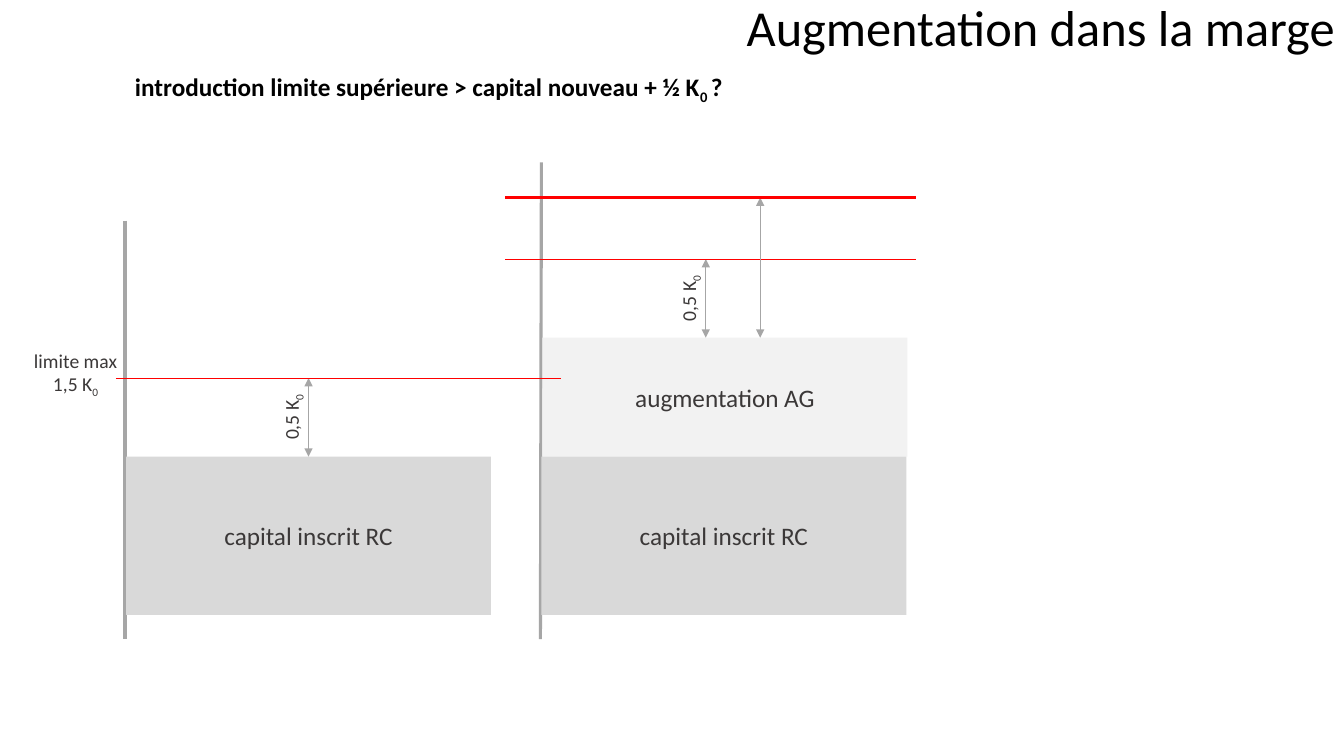
"""Build the slide on raising capital within the authorised margin."""
from typing import NamedTuple

from lxml import etree
from pptx import Presentation
from pptx.dml.color import RGBColor
from pptx.enum.shapes import MSO_CONNECTOR, MSO_SHAPE
from pptx.enum.text import MSO_ANCHOR, MSO_AUTO_SIZE, PP_ALIGN
from pptx.oxml.ns import qn
from pptx.util import Inches, Pt

STRAIGHT = MSO_CONNECTOR.STRAIGHT
RECTANGLE = MSO_SHAPE.RECTANGLE
TOP, MIDDLE = MSO_ANCHOR.TOP, MSO_ANCHOR.MIDDLE
LEFT, CENTER, RIGHT = PP_ALIGN.LEFT, PP_ALIGN.CENTER, PP_ALIGN.RIGHT
NO_FIT, GROW = MSO_AUTO_SIZE.NONE, MSO_AUTO_SIZE.SHAPE_TO_FIT_TEXT

COLORS = {
    "axis": "A6A6A6",
    "limit": "FF0000",
    "registered": "D9D9D9",
    "increase": "F2F2F2",
    "label": "3B3838",
    "heading": "000000",
}
FONT = "Calibri"
BLOCK_WIDTH = 3.62
BASE_TOP, BASE_HEIGHT = 4.53, 1.57
INCREASE_HEIGHT = 1.18
INCREASE_TOP = BASE_TOP - INCREASE_HEIGHT
OLD_LIMIT, NEW_LIMIT, RAISED_LIMIT = 3.75, 2.57, 1.96


class Piece(NamedTuple):
    text: str
    subscript: bool = False


class Block(NamedTuple):
    text: str
    left: float
    top: float
    height: float
    color: str


class Rule(NamedTuple):
    x1: float
    y1: float
    x2: float
    y2: float
    color: str
    weight: float
    arrows: bool = False


class Label(NamedTuple):
    left: float
    top: float
    width: float
    height: float
    lines: list
    size: int = 14
    color: str = "label"
    bold: bool = False
    align: PP_ALIGN = CENTER
    rotation: int = 0


ZERO = Piece("0", True)
HALF_CAPITAL = [[Piece("0,5 K"), ZERO]]

AXES = [
    Rule(1.24, 2.19, 1.24, 6.34, "axis", 2.25),
    Rule(5.37, 1.61, 5.36, 6.34, "axis", 2.25),
]
CURRENT_CAPITAL = Block("capital inscrit RC", 1.25, BASE_TOP, BASE_HEIGHT, "registered")
FUTURE_BLOCKS = [
    Block("augmentation AG", 5.38, INCREASE_TOP, INCREASE_HEIGHT, "increase"),
    Block("capital inscrit RC", 5.37, BASE_TOP, BASE_HEIGHT, "registered"),
]
CURRENT_MARGIN = Rule(3.06, OLD_LIMIT, 3.06, BASE_TOP, "axis", 0.5, True)
LIMITS_AND_MARGINS = [
    Rule(1.15, OLD_LIMIT, 5.56, OLD_LIMIT, "limit", 0.5),
    Rule(7, NEW_LIMIT, 7, INCREASE_TOP, "axis", 0.5, True),
    Rule(5.01, NEW_LIMIT, 9.09, NEW_LIMIT, "limit", 0.5),
    Rule(7.54, INCREASE_TOP, 7.54, RAISED_LIMIT, "axis", 0.5, True),
    Rule(5.01, RAISED_LIMIT, 9.09, RAISED_LIMIT, "limit", 2.5),
]
LABELS = [
    Label(0.23, 3.41, 1.04, 0.57, [[Piece("limite max")], [Piece("1,5 K"), ZERO]]),
    Label(2.56, 3.97, 0.66, 0.34, HALF_CAPITAL, rotation=270),
    Label(6.5, 2.79, 0.66, 0.34, HALF_CAPITAL, rotation=270),
    Label(1.24, 0.66, 6.05, 0.4,
          [[Piece("introduction limite supérieure > capital nouveau + ½ K"),
            Piece("0 ", True), Piece("?")]],
          18, "heading", True, LEFT),
]


def rgb(name: str) -> RGBColor:
    """Return the named colour."""
    return RGBColor.from_string(COLORS[name])


def style(paragraph, size: int, color: str, align: PP_ALIGN, bold: bool = False) -> None:
    """Set the font and alignment of a paragraph."""
    paragraph.alignment = align
    font = paragraph.font
    font.name, font.size, font.bold = FONT, Pt(size), bold
    font.color.rgb = rgb(color)


def add_block(slide, block: Block):
    """Draw a captioned block of capital."""
    shape = slide.shapes.add_shape(
        RECTANGLE, Inches(block.left), Inches(block.top),
        Inches(BLOCK_WIDTH), Inches(block.height))
    shape.shadow.inherit = False
    shape.fill.solid()
    shape.fill.fore_color.rgb = rgb(block.color)
    shape.line.fill.background()
    frame = shape.text_frame
    frame.vertical_anchor = MIDDLE
    frame.text = block.text
    style(frame.paragraphs[0], 18, "label", CENTER)
    return shape


def add_rule(slide, rule: Rule):
    """Draw an axis, a limit or a double-headed margin arrow."""
    connector = slide.shapes.add_connector(
        STRAIGHT, Inches(rule.x1), Inches(rule.y1), Inches(rule.x2), Inches(rule.y2))
    connector.line.color.rgb = rgb(rule.color)
    connector.line.width = Pt(rule.weight)
    if rule.arrows:
        outline = connector.line._get_or_add_ln()
        for end in ("a:headEnd", "a:tailEnd"):
            etree.SubElement(outline, qn(end), type="triangle")
    etree.SubElement(connector._element.spPr, qn("a:effectLst"))
    return connector


def add_label(slide, label: Label) -> None:
    """Write a label whose pieces may be subscripts."""
    box = slide.shapes.add_textbox(
        Inches(label.left), Inches(label.top), Inches(label.width), Inches(label.height))
    box.rotation = label.rotation
    frame = box.text_frame
    frame.word_wrap = False
    frame.auto_size = GROW
    for index, pieces in enumerate(label.lines):
        paragraph = frame.add_paragraph() if index else frame.paragraphs[0]
        style(paragraph, label.size, label.color, label.align, label.bold)
        for piece in pieces:
            run = paragraph.add_run()
            run.text = piece.text
            if piece.subscript:
                run._r.get_or_add_rPr().set("baseline", "-25000")


def set_title(slide, text: str) -> None:
    """Place and format the slide title."""
    title = slide.shapes.title
    title.left, title.top = Inches(0.75), Inches(-0.02)
    title.width, title.height = Inches(12.59), Inches(1.07)
    frame = title.text_frame
    frame.text = text
    frame.vertical_anchor = TOP
    frame.auto_size = NO_FIT
    style(frame.paragraphs[0], 36, "heading", RIGHT)
    frame.paragraphs[0].line_spacing = 0.9


def main() -> None:
    """Create and save the presentation."""
    deck = Presentation()
    deck.slide_width, deck.slide_height = Inches(13.33), Inches(7.5)
    slide = deck.slides.add_slide(deck.slide_layouts[5])
    set_title(slide, "Augmentation dans la marge")
    for axis in AXES:
        add_rule(slide, axis)
    current_capital = add_block(slide, CURRENT_CAPITAL)
    for block in FUTURE_BLOCKS:
        add_block(slide, block)
    add_rule(slide, CURRENT_MARGIN).end_connect(current_capital, 0)
    for rule in LIMITS_AND_MARGINS:
        add_rule(slide, rule)
    for label in LABELS:
        add_label(slide, label)
    deck.save("out.pptx")


if __name__ == "__main__":
    main()
